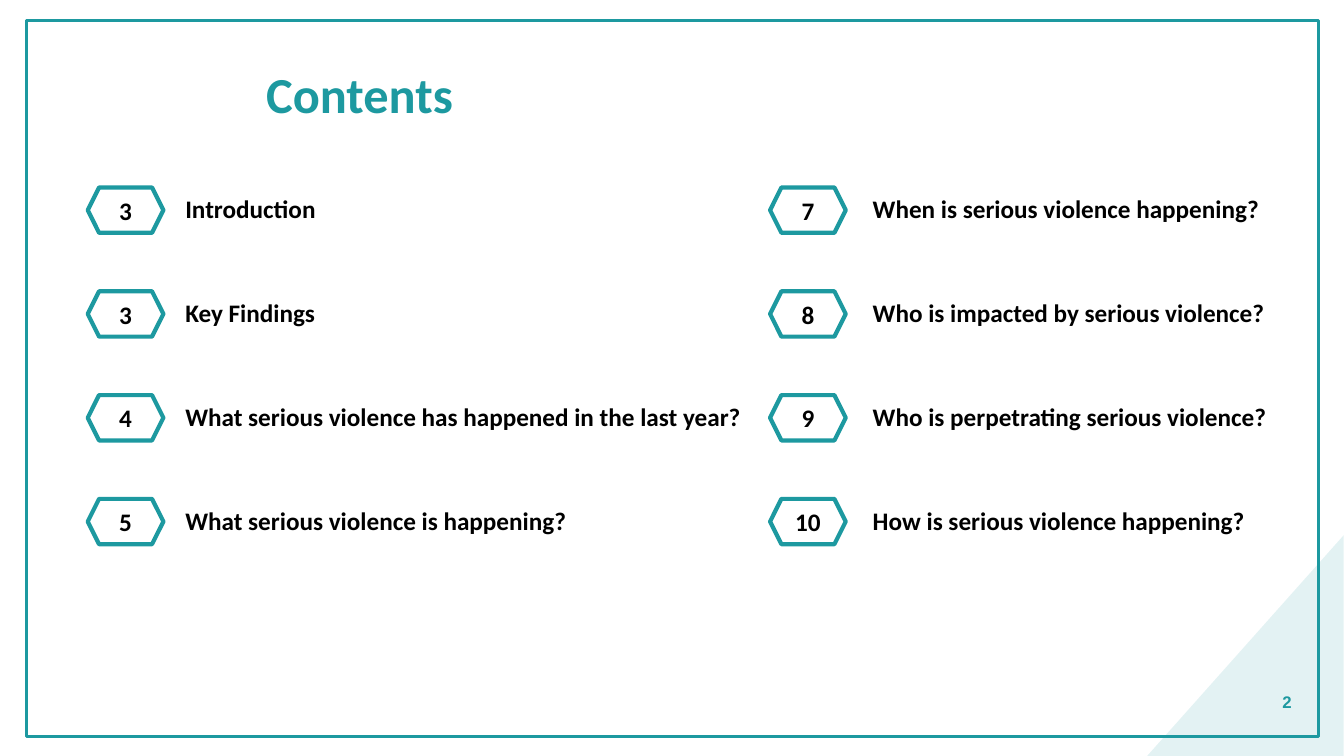
from dataclasses import dataclass

from pptx import Presentation
from pptx import util as u
from pptx.dml.color import RGBColor
from pptx.enum import shapes, text
from pptx.oxml.xmlchemy import OxmlElement

COLOURS = {"teal": "1D99A0", "ink": "000000"}
SLIDE_WIDTH, SLIDE_HEIGHT = u.Inches(13.33), u.Inches(7.5)

# Positions and sizes are percentages of the slide's width and height.
FIRST_ROW, ROW_PITCH = 24.8, 13.73
BADGE_WIDTH, BADGE_HEIGHT = 5.63, 6
LABEL_HEIGHT, LABEL_DROP = 5.33, 0.13


@dataclass(frozen=True)
class Box:
    left: float
    top: float
    width: float
    height: float

    def emu(self) -> tuple[int, int, int, int]:
        return (
            round(SLIDE_WIDTH * self.left / 100),
            round(SLIDE_HEIGHT * self.top / 100),
            round(SLIDE_WIDTH * self.width / 100),
            round(SLIDE_HEIGHT * self.height / 100),
        )


@dataclass(frozen=True)
class Entry:
    page: str
    heading: str


@dataclass(frozen=True)
class Column:
    badge_left: float
    label_left: float
    label_width: float
    entries: tuple[Entry, ...]


COLUMNS = (
    Column(6.53, 13.05, 43.6, (
        Entry("3", "Introduction"),
        Entry("3", "Key Findings"),
        Entry("4", "What serious violence has happened in the last year?"),
        Entry("5", "What serious violence is happening?"),
    )),
    Column(57.3, 64.2, 35, (
        Entry("7", "When is serious violence happening?"),
        Entry("8", "Who is impacted by serious violence?"),
        Entry("9", "Who is perpetrating serious violence?"),
        Entry("10", "How is serious violence happening?"),
    )),
)


def rgb(name: str) -> RGBColor:
    return RGBColor.from_string(COLOURS[name])


def write(holder, words: str, *, size: float = 18, font: str = "Calibri",
          colour: str = "ink", align=text.PP_ALIGN.LEFT,
          anchor=text.MSO_ANCHOR.MIDDLE, wrap: bool = True,
          spacing: float = 1.0) -> None:
    frame = holder.text_frame
    frame.word_wrap = wrap
    frame.auto_size = text.MSO_AUTO_SIZE.NONE
    frame.vertical_anchor = anchor
    paragraph = frame.paragraphs[0]
    paragraph.alignment = align
    paragraph.line_spacing = spacing
    run = paragraph.add_run()
    run.text = words
    run.font.name = font
    run.font.size = u.Pt(size)
    run.font.bold = True
    run.font.color.rgb = rgb(colour)


def add_outline(slide, preset, box: Box, line_width: float):
    """Add an unfilled teal shape."""
    outline = slide.shapes.add_shape(preset, *box.emu())
    outline.shadow.inherit = False
    outline.fill.background()
    outline.line.color.rgb = rgb("teal")
    outline.line.width = u.Pt(line_width)
    return outline


def add_corner(slide, box: Box, opacity: int) -> None:
    """Add the pale triangle in the bottom right corner."""
    corner = slide.shapes.add_shape(shapes.MSO_SHAPE.RIGHT_TRIANGLE, *box.emu())
    corner.rotation = 270
    corner.shadow.inherit = False
    corner.line.fill.background()
    corner.fill.solid()
    corner.fill.fore_color.rgb = rgb("teal")
    alpha = OxmlElement("a:alpha")
    alpha.set("val", str(opacity * 1000))
    corner.fill._xPr.solidFill[0].append(alpha)


def add_title(slide, box: Box, words: str) -> None:
    title = slide.shapes.title
    title.left, title.top, title.width, title.height = box.emu()
    write(title, words, size=36, colour="teal", spacing=0.9)


def add_entry(slide, column: Column, row: int, entry: Entry) -> None:
    top = FIRST_ROW + row * ROW_PITCH
    badge = add_outline(slide, shapes.MSO_SHAPE.HEXAGON,
                        Box(column.badge_left, top, BADGE_WIDTH, BADGE_HEIGHT), 3)
    write(badge, entry.page, align=text.PP_ALIGN.CENTER, wrap=False)
    label = slide.shapes.add_textbox(
        *Box(column.label_left, top + LABEL_DROP, column.label_width, LABEL_HEIGHT).emu())
    write(label, entry.heading, anchor=text.MSO_ANCHOR.TOP)


def main() -> None:
    deck = Presentation()
    deck.slide_width, deck.slide_height = SLIDE_WIDTH, SLIDE_HEIGHT
    slide = deck.slides.add_slide(deck.slide_layouts.get_by_name("Title Only"))

    add_outline(slide, shapes.MSO_SHAPE.RECTANGLE, Box(1.95, 2.67, 96.15, 94.8), 2.25)
    add_corner(slide, Box(84.45, 72.4, 16.43, 26), opacity=12)
    add_title(slide, Box(19.05, 3.2, 75.45, 19.33), "Contents")
    page_number = slide.shapes.add_textbox(*Box(94.35, 90.13, 2.5, 5.33).emu())
    write(page_number, "2", size=12, font="Arial", colour="teal",
          align=text.PP_ALIGN.RIGHT)

    for column in COLUMNS:
        for row, entry in enumerate(column.entries):
            add_entry(slide, column, row, entry)

    deck.save("out.pptx")


if __name__ == "__main__":
    main()
